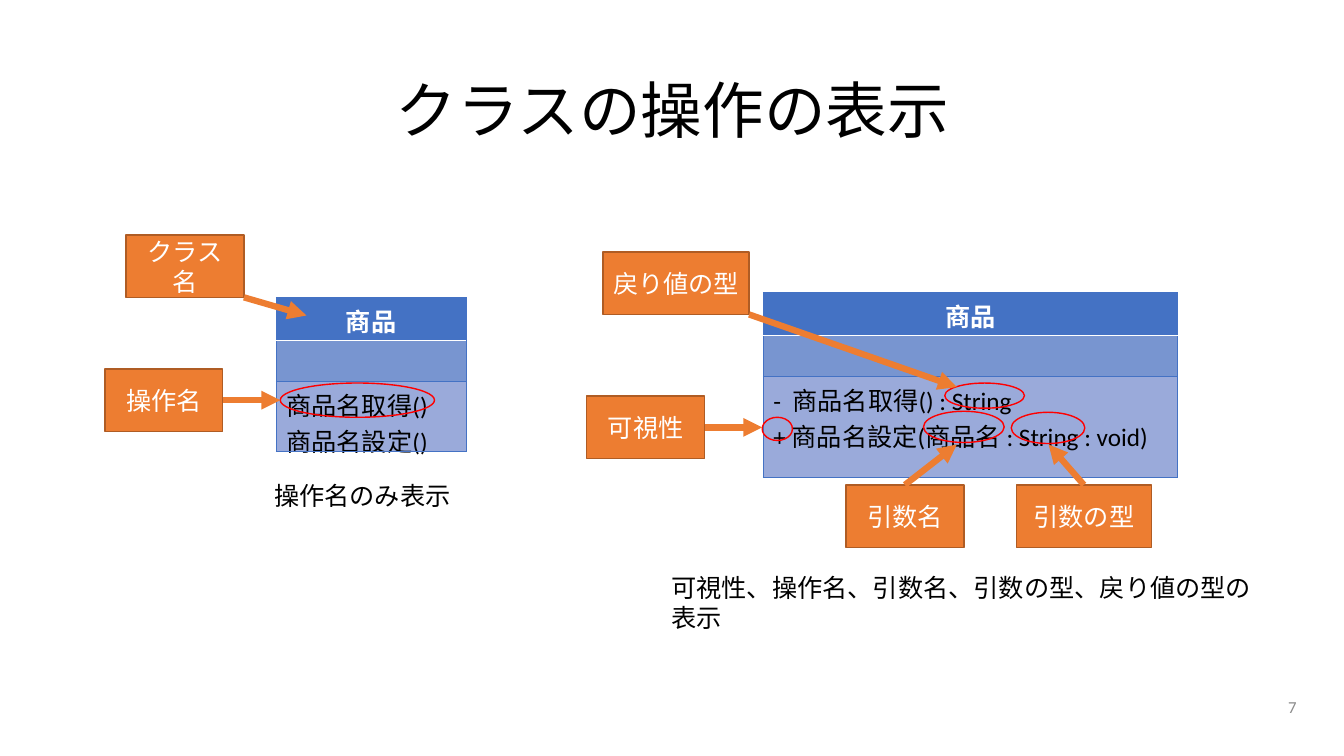
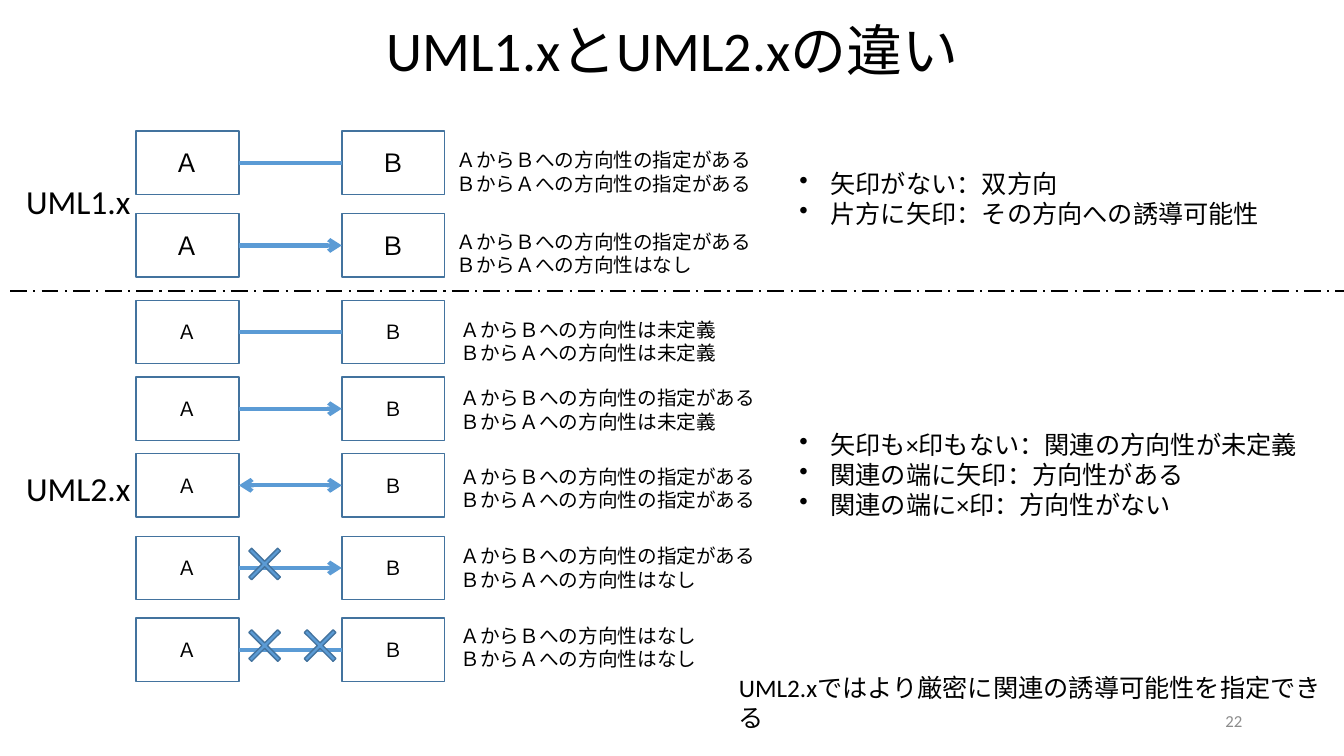
"""Build two slides on UML class operations and association navigability."""
import pptx
import pptx.dml.color
import pptx.enum.dml
import pptx.enum.shapes
import pptx.enum.text
import pptx.oxml.ns
import pptx.util
from lxml import etree

Inches, Pt = pptx.util.Inches, pptx.util.Pt
SHAPE = pptx.enum.shapes.MSO_SHAPE
ALIGN = pptx.enum.text.PP_ALIGN
ANCHOR = pptx.enum.text.MSO_ANCHOR
qn = pptx.oxml.ns.qn

WIDTH, HEIGHT = 13.33, 7.5
LATIN, JAPANESE = "Calibri", "Noto Sans CJK JP"
BLACK, WHITE, GRAY, RED = "000000", "FFFFFF", "8C8C8C", "FF0000"
ORANGE, ORANGE_EDGE = "ED7D31", "AF5C24"
SKY, SKY_EDGE = "5B9BD5", "43739E"
HEADER, ATTRIBUTES, OPERATIONS = "4472C4", "7895D0", "9AAADA"

CLASS_TABLES = [
    (2.74, 2.95, 1.88, "商品", ["商品名取得()", "商品名設定()"]),
    (7.57, 2.9, 4.11, "商品",
     ["-  商品名取得() : String", "+ 商品名設定(商品名 : String : void)"]),
]
TABLE_ROWS = [0.43, 0.3, 0.68]
HIGHLIGHTS = [
    (2.78, 3.8, 1.53, 0.34), (7.56, 4.14, 0.3, 0.23), (9.37, 3.8, 0.79, 0.25),
    (9.16, 4.08, 0.8, 0.31), (10.03, 4.09, 0.73, 0.31),
]
RIGHT, CORNER, TOP = (1, 0.5), (1, 1), (0.5, 0)
LABEL_HEIGHT = 0.62
LABELS = [
    ("操作名", 1.04, 3.66, 1.17, RIGHT, (2.78, 3.97)),
    ("クラス名", 1.25, 2.33, 1.17, CORNER, (3.04, 3.13)),
    ("可視性", 5.82, 3.93, 1.17, RIGHT, (7.56, 4.24)),
    ("戻り値の型", 5.98, 2.5, 1.45, CORNER, (9.49, 3.84)),
    ("引数名", 8.39, 4.81, 1.17, TOP, (9.49, 4.41)),
    ("引数の型", 10.08, 4.81, 1.34, TOP, (10.4, 4.41)),
]
TABLE_CAPTIONS = [
    ("操作名のみ表示", (2.62, 4.72, 2.74, 0.4)),
    ("可視性、操作名、引数名、引数の型、戻り値の型の表示", (6.56, 5.63, 6.17, 0.4)),
]

BOX_A, BOX_B, BOX_WIDTH, BOX_HEIGHT = 1.35, 3.39, 1.02, 0.63
CROSS_SIZE, CROSS_LEFT, CROSS_RIGHT = 0.55, 2.35, 2.9
GIVEN, UNDEFINED, NONE = "の指定がある", "は未定義", "はなし"
VERSIONS = [
    {"name": "UML1.x", "name_top": 1.75, "size": 18, "caption_left": 4.43,
     "rules_top": 1.62,
     "rules": ["矢印がない：双方向", "片方に矢印：その方向への誘導可能性"],
     "rows": [(1.3, 1.42, GIVEN, GIVEN, "", []),
              (2.12, 2.23, GIVEN, NONE, "tail", [])]},
    {"name": "UML2.x", "name_top": 4.59, "size": 14, "caption_left": 4.47,
     "rules_top": 4.21,
     "rules": ["矢印も×印もない：関連の方向性が未定義",
               "関連の端に矢印：方向性がある", "関連の端に×印：方向性がない"],
     "rows": [(2.98, 3.1, UNDEFINED, UNDEFINED, "", []),
              (3.74, 3.78, GIVEN, UNDEFINED, "tail", []),
              (4.5, 4.56, GIVEN, GIVEN, "head tail", []),
              (5.32, 5.35, GIVEN, NONE, "tail", [CROSS_LEFT]),
              (6.13, 6.14, NONE, NONE, "", [CROSS_LEFT, CROSS_RIGHT])]},
]
CONCLUSION = "UML2.xではより厳密に関連の誘導可能性を指定できる"


def color(value):
    return pptx.dml.color.RGBColor.from_string(value)


def write(frame, lines, size=18, ink=BLACK, align=ALIGN.LEFT, bold=False,
          latin=LATIN, asian=LATIN, spacing=None, bullet=False):
    frame.word_wrap = True
    for index, line in enumerate(lines):
        paragraph = frame.paragraphs[0] if index == 0 else frame.add_paragraph()
        paragraph.text = line
        paragraph.alignment = align
        paragraph.line_spacing = spacing
        font = paragraph.font
        font.name, font.size, font.bold = latin, Pt(size), bold
        font.color.rgb = color(ink)
        properties = paragraph._p.get_or_add_pPr()
        etree.SubElement(properties.find(qn("a:defRPr")), qn("a:ea"), typeface=asian)
        if bullet:
            properties.set("marL", str(Inches(0.31)))
            properties.set("indent", str(-Inches(0.31)))
            mark = etree.Element(qn("a:buChar"), char="•")
            properties.find(qn("a:defRPr")).addprevious(mark)


def add_text(slide, box, lines, anchor=ANCHOR.TOP, **style):
    frame = slide.shapes.add_textbox(*map(Inches, box)).text_frame
    frame.vertical_anchor = anchor
    write(frame, lines, **style)


def add_shape(slide, kind, box, edge, fill=None):
    shape = slide.shapes.add_shape(kind, *map(Inches, box))
    shape.shadow.inherit = False
    if fill:
        shape.fill.solid()
        shape.fill.fore_color.rgb = color(fill)
    else:
        shape.fill.background()
    shape.line.color.rgb = color(edge)
    shape.line.width = Pt(1)
    return shape


def add_line(slide, start, end, ink, width, ends="", arrow="triangle"):
    line = slide.shapes.add_connector(
        pptx.enum.shapes.MSO_CONNECTOR.STRAIGHT, *map(Inches, start + end))
    line.line.color.rgb = color(ink)
    line.line.width = Pt(width)
    for end_name in ends.split():
        etree.SubElement(line.line._get_or_add_ln(), qn(f"a:{end_name}End"), type=arrow)
    etree.SubElement(line._element.spPr, qn("a:effectLst"))
    return line


def add_slide(presentation, title, title_box, title_size, number, number_box):
    slide = presentation.slides.add_slide(presentation.slide_layouts[6])
    add_text(slide, title_box, [title], ANCHOR.MIDDLE, size=title_size,
             align=ALIGN.CENTER, spacing=0.9)
    add_text(slide, number_box, [number], ANCHOR.MIDDLE, size=12, ink=GRAY,
             align=ALIGN.RIGHT)
    return slide


def set_borders(cell, bottom):
    properties = cell._tc.get_or_add_tcPr()
    edges = [("lnL", HEADER, 0.5), ("lnR", HEADER, 0.5), ("lnT", HEADER, 0.5),
             ("lnB", *bottom)]
    for position, (tag, ink, width) in enumerate(edges):
        edge = etree.Element(qn(f"a:{tag}"), w=str(Pt(width)))
        fill = etree.SubElement(edge, qn("a:solidFill"))
        etree.SubElement(fill, qn("a:srgbClr"), val=ink)
        properties.insert(position, edge)


def add_class_table(slide, left, top, width, name, operations):
    table = slide.shapes.add_table(
        len(TABLE_ROWS), 1, *map(Inches, (left, top, width, sum(TABLE_ROWS)))).table
    contents = [([name], HEADER, (WHITE, 1)), ([""], ATTRIBUTES, (HEADER, 0.5)),
                (operations, OPERATIONS, (HEADER, 0.5))]
    for index, (lines, fill, bottom) in enumerate(contents):
        table.rows[index].height = Inches(TABLE_ROWS[index])
        cell = table.cell(index, 0)
        cell.fill.solid()
        cell.fill.fore_color.rgb = color(fill)
        set_borders(cell, bottom)
        header = index == 0
        write(cell.text_frame, lines, ink=WHITE if header else BLACK, bold=header,
              align=ALIGN.CENTER if header else ALIGN.LEFT, asian=JAPANESE)


def build_operations(presentation):
    slide = add_slide(presentation, "クラスの操作の表示", (0.92, 0.4, 11.5, 1.45), 44,
                      "7", (9.96, 6.81, 3, 0.4))
    for class_table in CLASS_TABLES:
        add_class_table(slide, *class_table)
    for box in HIGHLIGHTS:
        add_shape(slide, SHAPE.OVAL, box, RED)
    for text, left, top, width, (across, down), target in LABELS:
        label = add_shape(slide, SHAPE.RECTANGLE, (left, top, width, LABEL_HEIGHT),
                          ORANGE_EDGE, ORANGE)
        write(label.text_frame, [text], ink=WHITE, align=ALIGN.CENTER)
        start = (left + across * width, top + down * LABEL_HEIGHT)
        add_line(slide, start, target, ORANGE, 4.5, "tail")
    for text, box in TABLE_CAPTIONS:
        add_text(slide, box, [text])


def add_association(slide, version, top, caption_top, forward, backward, ends, crosses):
    for name, left in (("Ａ", BOX_A), ("Ｂ", BOX_B)):
        box = add_shape(slide, SHAPE.RECTANGLE, (left, top, BOX_WIDTH, BOX_HEIGHT),
                        SKY_EDGE)
        write(box.text_frame, [name], size=version["size"], align=ALIGN.CENTER)
    middle = top + BOX_HEIGHT / 2
    add_line(slide, (BOX_A + BOX_WIDTH, middle), (BOX_B, middle), SKY, 3, ends, "arrow")
    add_text(slide, (version["caption_left"], caption_top, 3.15, 0.57),
             ["ＡからＢへの方向性" + forward, "ＢからＡへの方向性" + backward],
             size=14, latin=JAPANESE)
    for left in crosses:
        cross = add_shape(slide, SHAPE.MATH_MULTIPLY, (left, top, CROSS_SIZE, CROSS_SIZE),
                          SKY_EDGE, SKY)
        cross.adjustments[0] = 0.07


def build_versions(presentation):
    slide = add_slide(presentation, "UML1.xとUML2.xの違い", (0.92, 0.1, 11.5, 0.85), 40,
                      "22", (9.42, 6.95, 3, 0.4))
    divider = add_line(slide, (0.1, 2.89), (13.43, 2.89), BLACK, 1.5)
    divider.line.dash_style = pptx.enum.dml.MSO_LINE.LONG_DASH_DOT
    for version in VERSIONS:
        add_text(slide, (0.16, version["name_top"], 2.46, 0.5), [version["name"]], size=24)
        for row in version["rows"]:
            add_association(slide, version, *row)
        rules = version["rules"]
        add_text(slide, (7.83, version["rules_top"], 5.5, 0.1 + 0.3 * len(rules)), rules,
                 bullet=True)
    add_text(slide, (7.23, 6.62, 6.01, 0.4), [CONCLUSION])


def main():
    presentation = pptx.Presentation()
    presentation.slide_width, presentation.slide_height = Inches(WIDTH), Inches(HEIGHT)
    build_operations(presentation)
    build_versions(presentation)
    presentation.save("out.pptx")


if __name__ == "__main__":
    main()
